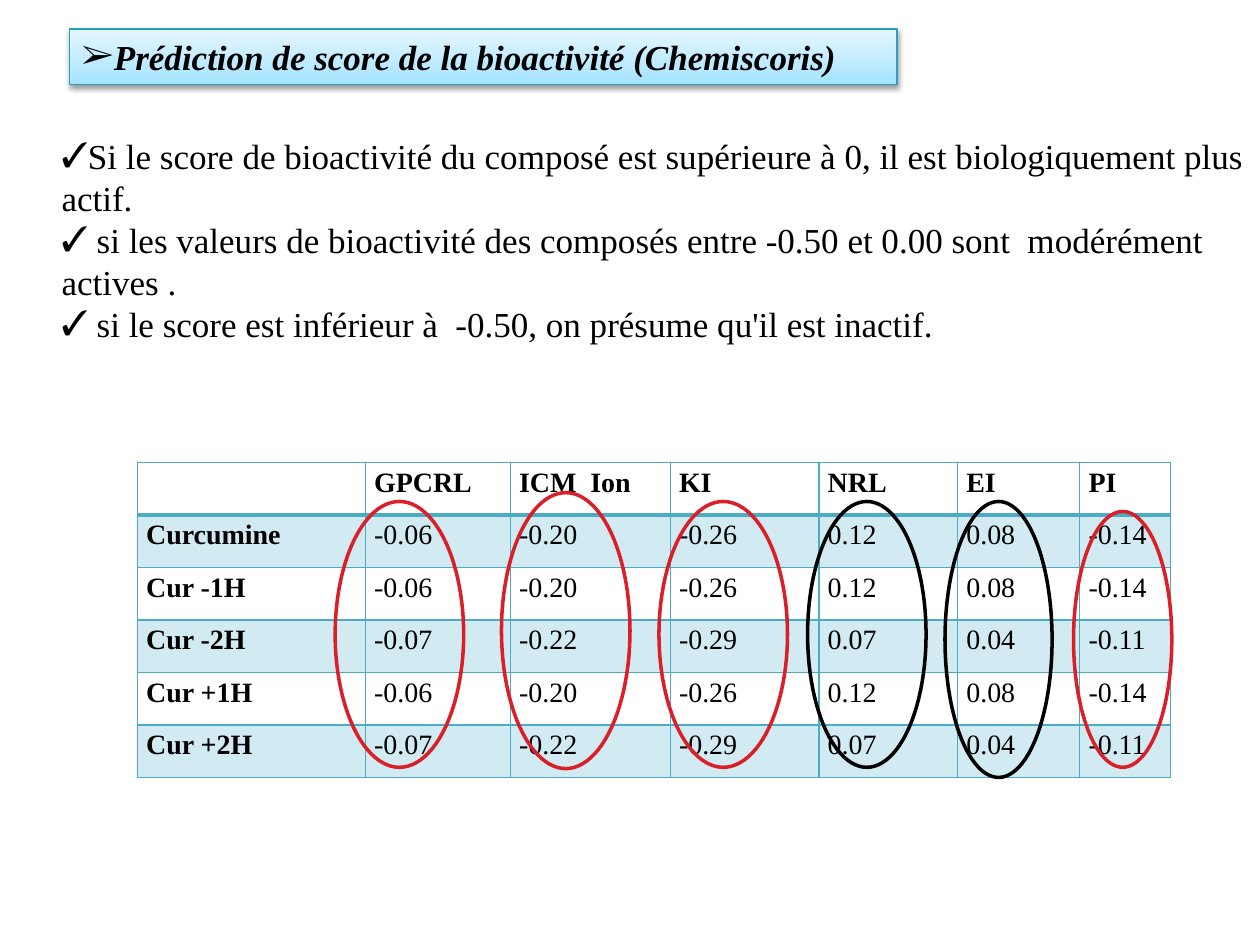
import dataclasses

import pptx
import pptx.dml.color
import pptx.enum.shapes
import pptx.enum.text
import pptx.oxml
import pptx.oxml.ns
import pptx.util


@dataclasses.dataclass(frozen=True)
class Theme:
    font: str = "Times New Roman"
    text: str = "000000"
    title_line: str = "28A1BE"
    title_stops: tuple = ((0, "A1E3FF"), (35, "BDEAFF"), (100, "E6F7FF"))
    border: str = "4BACC6"
    band: str = "D2EAF1"
    red: str = "DA1F28"
    black: str = "000000"
    body_size: int = 20
    table_size: int = 16


THEME = Theme()
COLUMNS, ROWS = 100, 75  # slide grid, one unit is a tenth of an inch
UNIT = pptx.util.Inches(10) // COLUMNS

TITLE = "Prédiction de score de la bioactivité (Chemiscoris)"
RULES = (
    "Si le score de bioactivité du composé est supérieure à 0, il est biologiquement plus actif.",
    " si les valeurs de bioactivité des composés entre -0.50 et 0.00 sont  modérément actives .",
    " si le score est inférieur à  -0.50, on présume qu'il est inactif.",
)
SCORES = (
    ("", "GPCRL", "ICM  Ion", "KI", "NRL", "EI", "PI"),
    ("Curcumine", "-0.06", "-0.20", "-0.26", "0.12", "0.08", "-0.14"),
    ("Cur -1H", "-0.06", "-0.20", "-0.26", "0.12", "0.08", "-0.14"),
    ("Cur -2H", "-0.07", "-0.22", "-0.29", "0.07", "0.04", "-0.11"),
    ("Cur +1H", "-0.06", "-0.20", "-0.26", "0.12", "0.08", "-0.14"),
    ("Cur +2H", "-0.07", "-0.22", "-0.29", "0.07", "0.04", "-0.11"),
)
COLUMN_WIDTHS = (18.1, 11.5, 12.7, 11.8, 11, 9.7, 7.2)
# left and top from the table's corner, width, height, colour
RINGS = (
    (15.7, 3.1, 10.2, 21.1, THEME.red),
    (28.9, 2.4, 10.2, 21.9, THEME.red),
    (41.4, 3.1, 10.2, 21.1, THEME.red),
    (74.3, 3.9, 7.8, 20.3, THEME.red),
    (53.2, 3.1, 9.4, 21.1, THEME.black),
    (64.1, 3.1, 8.5, 21.9, THEME.black),
)


def grid(*units):
    return [round(u * UNIT) for u in units]


def rgb(value):
    return pptx.dml.color.RGBColor.from_string(value)


def drawing(xml):
    """Parse one DrawingML element written with the a: prefix."""
    head, tail = xml.split(">", 1)
    slash = "/" if head.endswith("/") else ""
    ns = pptx.oxml.ns.nsdecls("a")
    return pptx.oxml.parse_xml(f"{head.rstrip('/')} {ns}{slash}>{tail}")


def write(p, text, size, bold=False, italic=False, bullet=None, spacing=None):
    r = p.add_run()
    r.text = text
    r.font.name = THEME.font
    r.font.size = pptx.util.Pt(size)
    r.font.bold, r.font.italic = bold, italic
    r.font.color.rgb = rgb(THEME.text)
    p.alignment = pptx.enum.text.PP_ALIGN.LEFT
    if spacing:
        p.line_spacing = spacing
    if bullet:
        pPr = p._p.get_or_add_pPr()
        pPr.set("marL", "0")
        pPr.set("indent", "0")
        pPr.append(drawing(f'<a:buFont typeface="{THEME.font}"/>'))
        pPr.append(drawing(f'<a:buChar char="{bullet}"/>'))


def add_title(s, box):
    sp = s.shapes.add_shape(pptx.enum.shapes.MSO_SHAPE.RECTANGLE, *grid(*box))
    sp.line.color.rgb = rgb(THEME.title_line)
    sp.line.width = pptx.util.Pt(0.75)
    stops = "".join(
        f'<a:gs pos="{pos * 1000}"><a:srgbClr val="{color}"/></a:gs>'
        for pos, color in THEME.title_stops
    )
    spPr = sp._element.spPr
    spPr.insert(2, drawing(
        f'<a:gradFill rotWithShape="1"><a:gsLst>{stops}</a:gsLst>'
        '<a:lin ang="16200000" scaled="0"/></a:gradFill>'
    ))
    blur, dist = pptx.util.Pt(3.1), pptx.util.Pt(1.6)
    spPr.append(drawing(
        f'<a:effectLst><a:outerShdw blurRad="{blur}" dist="{dist}" dir="5400000" '
        'rotWithShape="0"><a:srgbClr val="000000"><a:alpha val="38000"/></a:srgbClr>'
        '</a:outerShdw></a:effectLst>'
    ))
    tf = sp.text_frame
    tf.word_wrap = False
    tf.vertical_anchor = pptx.enum.text.MSO_ANCHOR.TOP
    tf.auto_size = pptx.enum.text.MSO_AUTO_SIZE.NONE
    write(tf.paragraphs[0], TITLE, THEME.body_size, bold=True, italic=True, bullet="➢")


def add_rules(s, box):
    tf = s.shapes.add_textbox(*grid(*box)).text_frame
    tf.word_wrap = True
    tf.auto_size = pptx.enum.text.MSO_AUTO_SIZE.SHAPE_TO_FIT_TEXT
    for i, rule in enumerate(RULES):
        p = tf.add_paragraph() if i else tf.paragraphs[0]
        write(p, rule, THEME.body_size, bullet="✓")


def set_borders(cell, **widths):
    tcPr = cell._tc.get_or_add_tcPr()
    for i, side in enumerate("LRTB"):
        width = pptx.util.Pt(widths.get(side, 1))
        tcPr.insert(i, drawing(
            f'<a:ln{side} w="{width}"><a:solidFill><a:srgbClr val="{THEME.border}"/>'
            f'</a:solidFill></a:ln{side}>'
        ))


def add_scores(s, box):
    table = s.shapes.add_table(len(SCORES), len(SCORES[0]), *grid(*box)).table
    table.first_row = table.horz_banding = False
    for column, width in zip(table.columns, grid(*COLUMN_WIDTHS)):
        column.width = width
    for i, row in enumerate(SCORES):
        for j, text in enumerate(row):
            cell = table.cell(i, j)
            cell.margin_left = cell.margin_right = pptx.util.Inches(0.07)
            cell.margin_top = cell.margin_bottom = 0
            if i % 2:
                cell.fill.solid()
                cell.fill.fore_color.rgb = rgb(THEME.band)
            else:
                cell.fill.background()
            set_borders(cell, T=2.25 if i == 1 else 1, B=2.25 if i == 0 else 1)
            if text:
                write(cell.text_frame.paragraphs[0], text, THEME.table_size,
                      bold=i == 0 or j == 0, spacing=1.15)


def add_rings(s, box):
    """Circle each column of values in the table that fills the box."""
    for left, top, width, height, color in RINGS:
        sp = s.shapes.add_shape(
            pptx.enum.shapes.MSO_SHAPE.OVAL,
            *grid(box[0] + left, box[1] + top, width, height),
        )
        sp.shadow.inherit = False
        sp.fill.background()
        sp.line.color.rgb = rgb(color)
        sp.line.width = pptx.util.Pt(2)


def main():
    prs = pptx.Presentation()
    prs.slide_width, prs.slide_height = grid(COLUMNS, ROWS)
    s = prs.slides.add_slide(prs.slide_layouts[6])
    table_box = (10.9, 36.7, sum(COLUMN_WIDTHS), 25)
    add_title(s, (5.5, 2.3, 65.7, 4.4))
    add_rules(s, (3.9, 10.2, 96.1, 17.8))
    add_scores(s, table_box)
    add_rings(s, table_box)
    prs.save("out.pptx")


if __name__ == "__main__":
    main()
